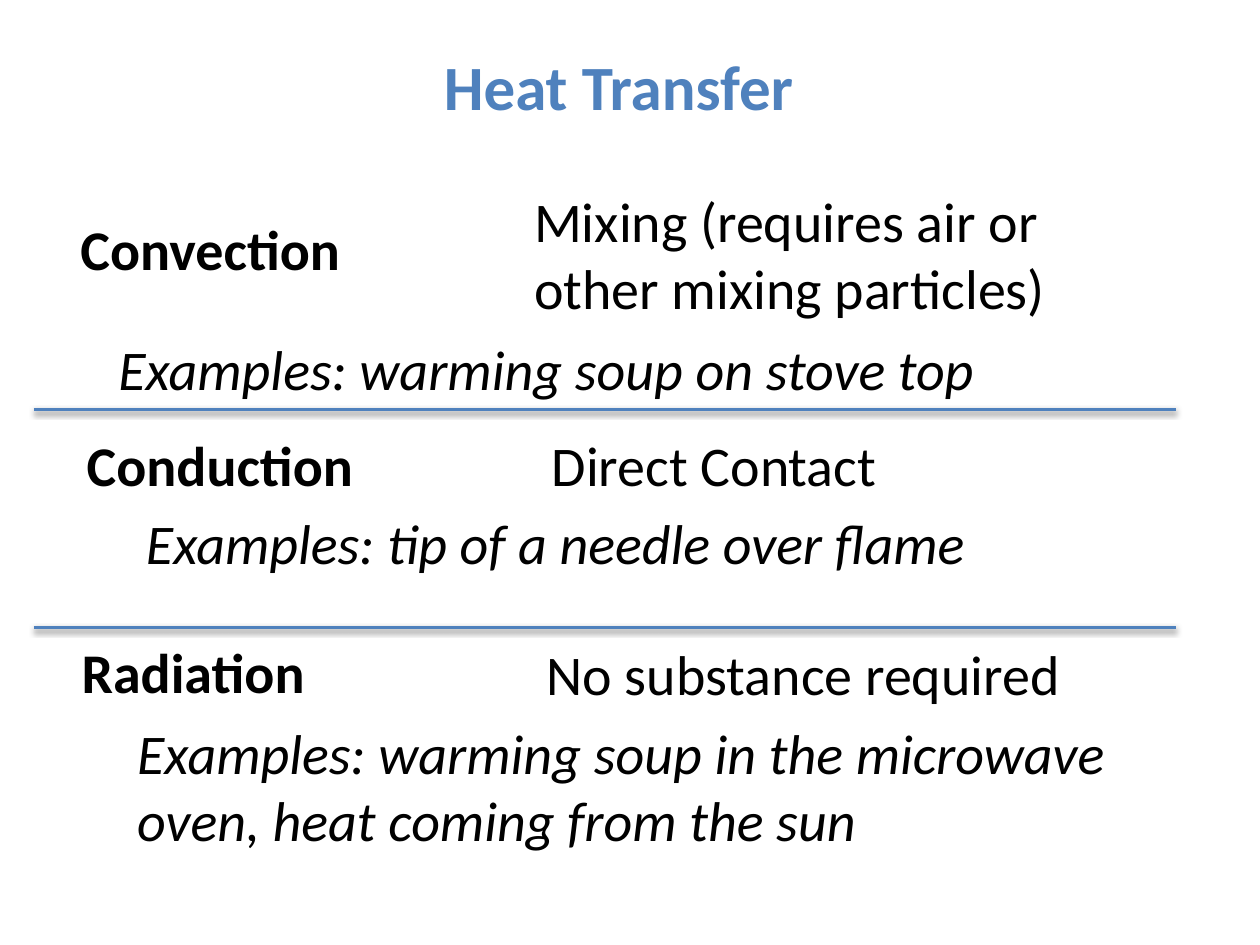
from lxml import etree
from pptx import Presentation
from pptx import util as u
from pptx.dml.color import RGBColor
from pptx.enum import shapes, text
from pptx.oxml import ns

PX = 9144  # EMU per px, 100 px to the inch
COLORS = {"accent": "4F81BD", "text": "000000", "shadow": "000000"}


class SlideBuilder:
    """Holds the style and the current slide."""

    font = "Calibri"
    title_size = 36
    body_size = 32

    def __init__(self, slide):
        self.slide = slide

    def place(self, shape, left, top, width, height):
        shape.left, shape.top = u.Emu(left * PX), u.Emu(top * PX)
        shape.width, shape.height = u.Emu(width * PX), u.Emu(height * PX)

    def add_run(self, paragraph, words, size, color, bold=False, italic=False):
        run = paragraph.add_run()
        run.text = words
        run.font.name = self.font
        run.font.size = u.Pt(size)
        run.font.bold = bold
        run.font.italic = italic
        run.font.color.rgb = RGBColor.from_string(COLORS[color])

    def title(self, words, left, top, width, height):
        shape = self.slide.shapes.title
        self.place(shape, left, top, width, height)
        frame = shape.text_frame
        frame.word_wrap = False
        frame.auto_size = text.MSO_AUTO_SIZE.SHAPE_TO_FIT_TEXT
        frame.vertical_anchor = text.MSO_ANCHOR.TOP
        paragraph = frame.paragraphs[0]
        paragraph.alignment = text.PP_ALIGN.CENTER
        self.add_run(paragraph, words, self.title_size, "accent", bold=True)

    def label(self, words, left, top, width, height=64, **style):
        shape = self.slide.shapes.add_textbox(0, 0, 0, 0)
        self.place(shape, left, top, width, height)
        frame = shape.text_frame
        frame.word_wrap = True
        frame.auto_size = text.MSO_AUTO_SIZE.SHAPE_TO_FIT_TEXT
        self.add_run(frame.paragraphs[0], words, self.body_size, "text", **style)

    def divider(self, left, right, top):
        line = self.slide.shapes.add_connector(
            shapes.MSO_CONNECTOR.STRAIGHT,
            left * PX, top * PX, right * PX, top * PX)
        line.line.color.rgb = RGBColor.from_string(COLORS["accent"])
        line.line.width = u.Pt(2)
        # Soft shadow straight below the line
        properties = line._element.spPr
        effects = etree.SubElement(properties, ns.qn("a:effectLst"))
        shadow = etree.SubElement(
            effects, ns.qn("a:outerShdw"), blurRad="40000", dist="20000",
            dir="5400000", rotWithShape="0")
        color = etree.SubElement(shadow, ns.qn("a:srgbClr"), val=COLORS["shadow"])
        etree.SubElement(color, ns.qn("a:alpha"), val="38000")


def main():
    presentation = Presentation()
    presentation.slide_width = u.Inches(10)
    presentation.slide_height = u.Inches(7.5)
    builder = SlideBuilder(
        presentation.slides.add_slide(presentation.slide_layouts[5]))

    builder.title("Heat Transfer", 338, 33, 306, 71)

    # Names of the kinds of heat transfer
    for name, left, top in (("Convection", 54, 165),
                            ("Conduction", 59, 337),
                            ("Radiation", 55, 501)):
        builder.label(name, left, top, 280, bold=True)

    # What each kind needs
    builder.label("Mixing (requires air or other mixing particles)",
                  414, 143, 519, 118)
    builder.label("Direct Contact", 428, 337, 315)
    builder.label("No substance required", 424, 503, 528)

    # Examples
    for example, left, top, height in (
            ("warming soup on stove top", 84, 261, 64),
            ("tip of a needle over flame", 106, 399, 64),
            ("warming soup in the microwave oven, heat coming from the sun",
             99, 565, 118)):
        builder.label(f"Examples: {example}", left, top, 849, height, italic=True)

    # Dividers between the kinds
    for top in (325, 498):
        builder.divider(27, 933, top)

    presentation.save("out.pptx")


if __name__ == "__main__":
    main()
